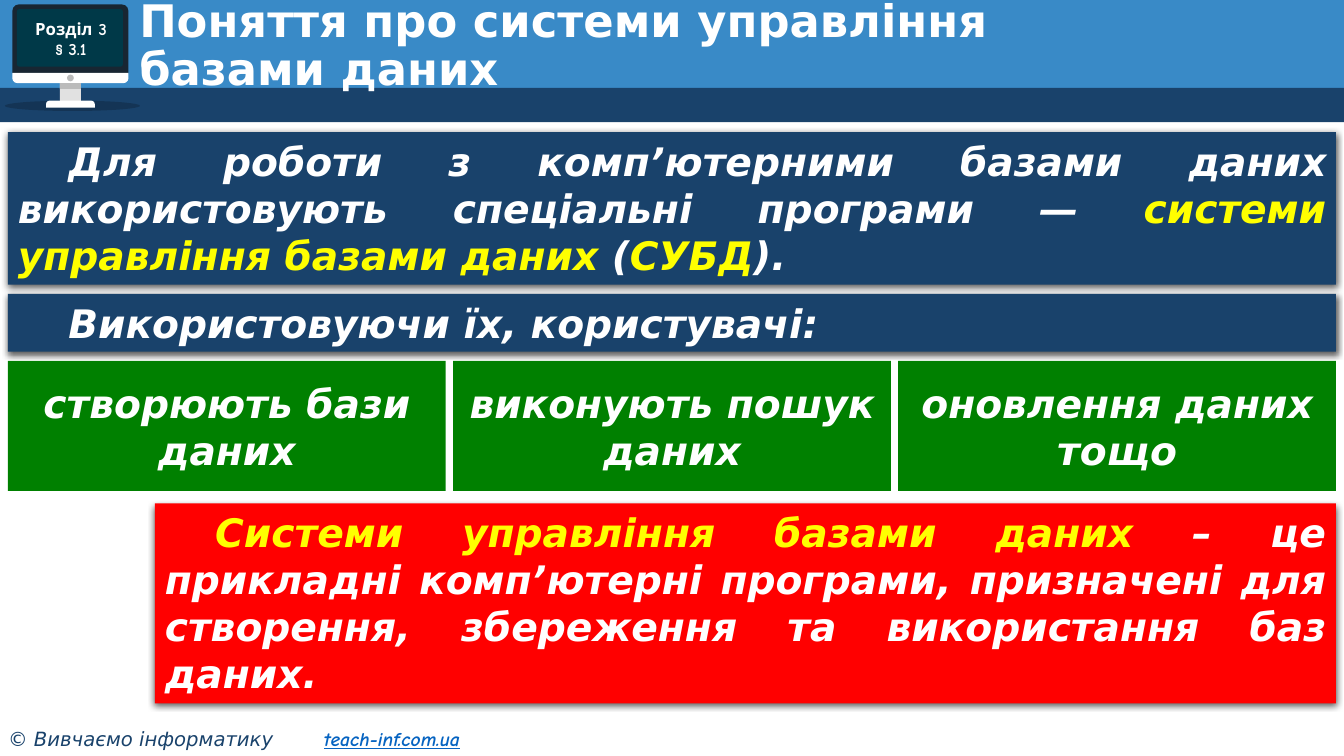
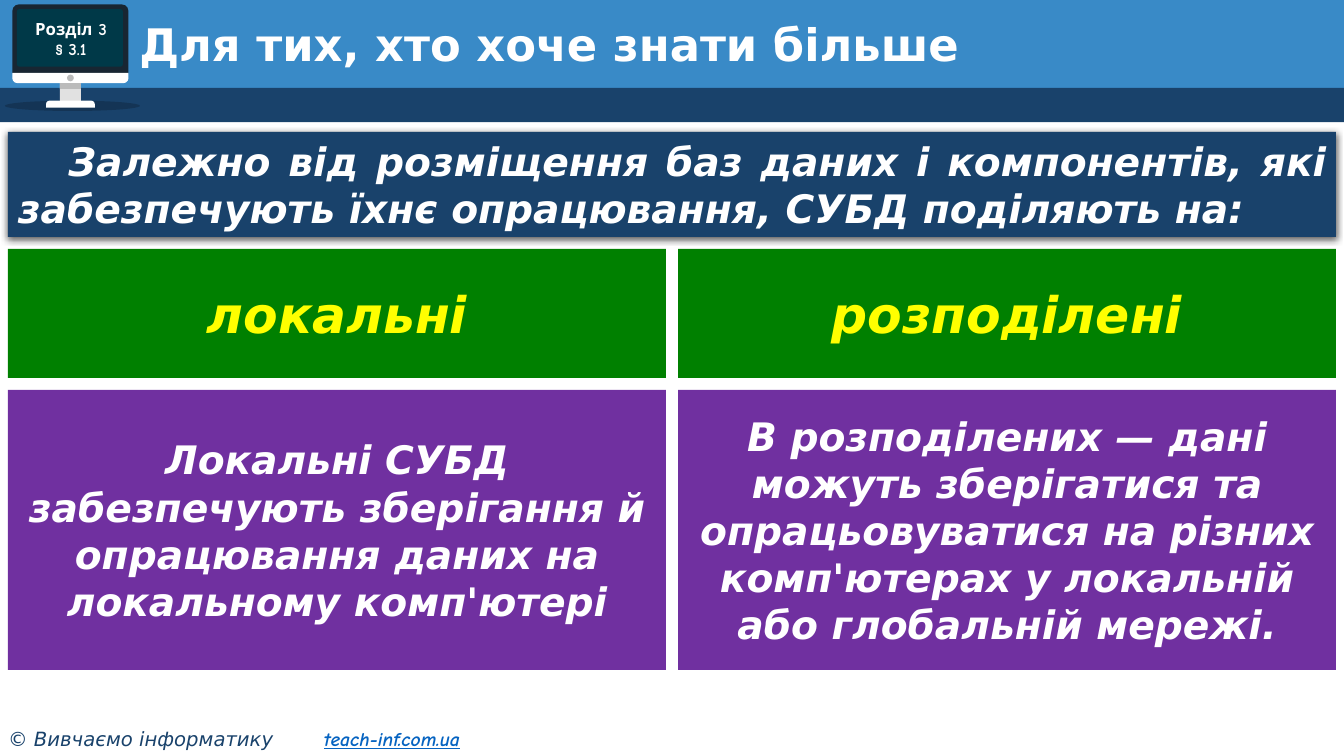
from lxml import etree
from pptx import Presentation
from pptx.dml.color import RGBColor
from pptx.enum import shapes, text
from pptx.oxml import ns
from pptx.util import Pt

WHITE = RGBColor(0xFF, 0xFF, 0xFF)
BLACK = RGBColor(0, 0, 0)
NAVY = RGBColor(0x19, 0x42, 0x6B)
BLUE = RGBColor(0x39, 0x8A, 0xC7)
GREEN = RGBColor(0, 0x80, 0)
RED = RGBColor(0xFF, 0, 0)
PURPLE = RGBColor(0x70, 0x30, 0xA0)
YELLOW = RGBColor(0xFF, 0xFF, 0)
LINK = RGBColor(0x05, 0x63, 0xC1)
BEZEL = RGBColor(0x18, 0x26, 0x32)
SCREEN = RGBColor(0, 0x39, 0x48)
STAND = RGBColor(0xE1, 0xE1, 0xE1)
GREY = RGBColor(0xBB, 0xBB, 0xBB)

SANS, COMIC = "DejaVu Sans", "Comic Neue"
BODY = dict(name=SANS, size=Pt(28), bold=True, italic=True)
TITLE = dict(name=SANS, size=Pt(32), bold=True)
BADGE = dict(name=COMIC, size=Pt(12), bold=True)
CREDIT = dict(name=SANS, size=Pt(14), italic=True)
SITE = dict(name=COMIC, size=Pt(14), bold=True, italic=True, underline=True)

W, H = 960, 540
LEFT, TOP, FULL = 5.7, 94.3, 948.6
KIND = shapes.MSO_SHAPE
ALIGN, ANCHOR = text.PP_ALIGN, text.MSO_ANCHOR


def sub(parent, tag, **attrs):
    return etree.SubElement(parent, ns.qn(tag), {k: str(v) for k, v in attrs.items()})


def add_run(p, words, color, style):
    r = p.add_run()
    r.text = words
    r.font.color.rgb = color
    for name, value in style.items():
        setattr(r.font, name, value)


def add_block(parent, kind, box, fill, adj=()):
    """Plain filled shape without outline or shadow."""
    sp = parent.add_shape(kind, *map(Pt, box))
    sp.shadow.inherit = False
    sp.fill.solid()
    sp.fill.fore_color.rgb = fill
    sp.line.fill.background()
    for i, value in enumerate(adj):
        sp.adjustments[i] = value
    return sp


def add_label(s, box, anchor=ANCHOR.MIDDLE):
    tf = s.shapes.add_textbox(*map(Pt, box)).text_frame
    tf.word_wrap = True
    tf.vertical_anchor = anchor
    return tf


def monitor(s, x, y):
    """Desktop computer that carries the section number."""
    group = s.shapes.add_group_shape().shapes
    parts = [
        (KIND.OVAL, (0, 68.8, 96.5, 7.4), BLACK, ()),
        (KIND.ROUND_2_SAME_RECTANGLE, (5.3, 0, 83, 49.3), BEZEL, (0.1, 0)),
        (KIND.ROUND_2_SAME_RECTANGLE, (5.3, 49, 83, 7.3), WHITE, (0, 0.5)),
        (KIND.RECTANGLE, (39.3, 56.3, 15, 12.7), STAND, ()),
        (KIND.RECTANGLE, (39.3, 56.3, 15, 4.2), GREY, ()),
        (KIND.ROUND_2_SAME_RECTANGLE, (29.4, 68.8, 34.8, 4.9), WHITE, (0.5, 0)),
        (KIND.OVAL, (44.4, 50.2, 4.8, 4.8), GREY, ()),
        (KIND.ROUNDED_RECTANGLE, (8.6, 3.5, 75.6, 41), SCREEN, (0.04,)),
    ]
    for i, (kind, (dx, dy, w, h), fill, adj) in enumerate(parts):
        sp = add_block(group, kind, (x + dx, y + dy, w, h), fill, adj)
        if i == 0:  # translucent ground shade
            color = sp.fill._xPr.find(ns.qn("a:solidFill"))[0]
            sub(color, "a:alpha", val=20000)
    tf = add_label(s, (x + 5.8, y + 3.4, 83, 42.5))
    for i, words in enumerate(("Розділ 3", "§ 3.1")):
        p = tf.add_paragraph() if i else tf.paragraphs[0]
        p.alignment = ALIGN.CENTER
        add_run(p, words, WHITE, BADGE)


def footer(s, x, y):
    tf = add_label(s, (x, y, 376, 24.2), ANCHOR.TOP)
    tf.margin_left = Pt(5.8)
    p = tf.paragraphs[0]
    tabs = sub(p._p.get_or_add_pPr(), "a:tabLst")
    sub(tabs, "a:tab", pos=Pt(225.6), algn="l")
    add_run(p, "© Вивчаємо інформатику\t", NAVY, CREDIT)
    add_run(p, "teach-inf.com.ua", LINK, SITE)


def new_slide(prs, title):
    """Blank slide with header bands, monitor, footer and title."""
    s = prs.slides.add_slide(prs.slide_layouts[6])
    add_block(s.shapes, KIND.RECTANGLE, (0, 0, W, 65.5), BLUE)
    add_block(s.shapes, KIND.RECTANGLE, (0, 62.8, W, 24.5), NAVY)
    monitor(s, 3.5, 3.1)
    footer(s, 0, 515.5)
    p = add_label(s, (92.4, 12.8, 713, 41.8)).paragraphs[0]
    p.line_spacing = 0.9
    add_run(p, title, WHITE, TITLE)
    return s


def banner(s, box, fill, runs):
    """Justified statement with a first-line indent and a soft shadow."""
    sp = add_block(s.shapes, KIND.RECTANGLE, box, fill)
    effects = sp._element.spPr.find(ns.qn("a:effectLst"))
    shadow = sub(effects, "a:outerShdw", blurRad=Pt(4.5), dist=Pt(1.5),
                 dir=5400000, algn="t", rotWithShape=0)
    sub(sub(shadow, "a:srgbClr", val=BLACK), "a:alpha", val=63000)
    tf = sp.text_frame
    tf.word_wrap = True
    tf.vertical_anchor = ANCHOR.TOP
    p = tf.paragraphs[0]
    p.alignment = ALIGN.JUSTIFY
    p._p.get_or_add_pPr().set("indent", str(Pt(36)))
    for words, color in runs:
        add_run(p, words, color, BODY)


def card_row(s, box, gap, fill, captions, color=WHITE, size=28):
    """Equal cards side by side across the box."""
    x, y, w, h = box
    card_w = (w - gap * (len(captions) - 1)) / len(captions)
    for i, words in enumerate(captions):
        card = (x + i * (card_w + gap), y, card_w, h)
        tf = add_block(s.shapes, KIND.RECTANGLE, card, fill).text_frame
        tf.word_wrap = True
        tf.vertical_anchor = ANCHOR.MIDDLE
        p = tf.paragraphs[0]
        p.alignment = ALIGN.CENTER
        add_run(p, words, color, {**BODY, "size": Pt(size)})


def concept_slide(prs):
    s = new_slide(prs, "Поняття про системи управління базами даних")
    banner(s, (LEFT, TOP, FULL, 109), NAVY, [
        ("Для роботи з комп’ютерними базами даних використовують "
         "спеціальні програми — ", WHITE),
        ("системи управління базами даних ", YELLOW),
        ("(", WHITE), ("СУБД", YELLOW), (").", WHITE)])
    banner(s, (LEFT, 210, FULL, 41.2), NAVY,
           [("Використовуючи їх, користувачі:", WHITE)])
    card_row(s, (LEFT, 257.8, FULL, 92.8), 5.3, GREEN,
             ["створюють бази даних", "виконують пошук даних",
              "оновлення даних тощо"])
    indent = 105
    banner(s, (LEFT + indent, 359.5, FULL - indent, 143), RED, [
        ("Системи управління базами даних ", YELLOW),
        ("– це прикладні комп’ютерні програми, призначені для створення, "
         "збереження та використання баз даних.", WHITE)])


def types_slide(prs):
    s = new_slide(prs, "Для тих, хто хоче знати більше")
    banner(s, (LEFT, TOP, FULL, 75), NAVY, [
        ("Залежно від розміщення баз даних і компонентів, які забезпечують "
         "їхнє опрацювання, СУБД поділяють на:", WHITE)])
    gap = 8.6
    card_row(s, (LEFT, 177.8, FULL, 92.2), gap, GREEN,
             ["локальні", "розподілені"], YELLOW, 36)
    card_row(s, (LEFT, 278.5, FULL, 200), gap, PURPLE, [
        "Локальні СУБД забезпечують зберігання й опрацювання даних "
        "на локальному комп'ютері",
        "В розподілених — дані можуть зберігатися та опрацьовуватися "
        "на різних комп'ютерах у локальній або глобальній мережі."])


def main():
    prs = Presentation()
    prs.slide_width, prs.slide_height = Pt(W), Pt(H)
    concept_slide(prs)
    types_slide(prs)
    prs.save("out.pptx")


if __name__ == "__main__":
    main()
